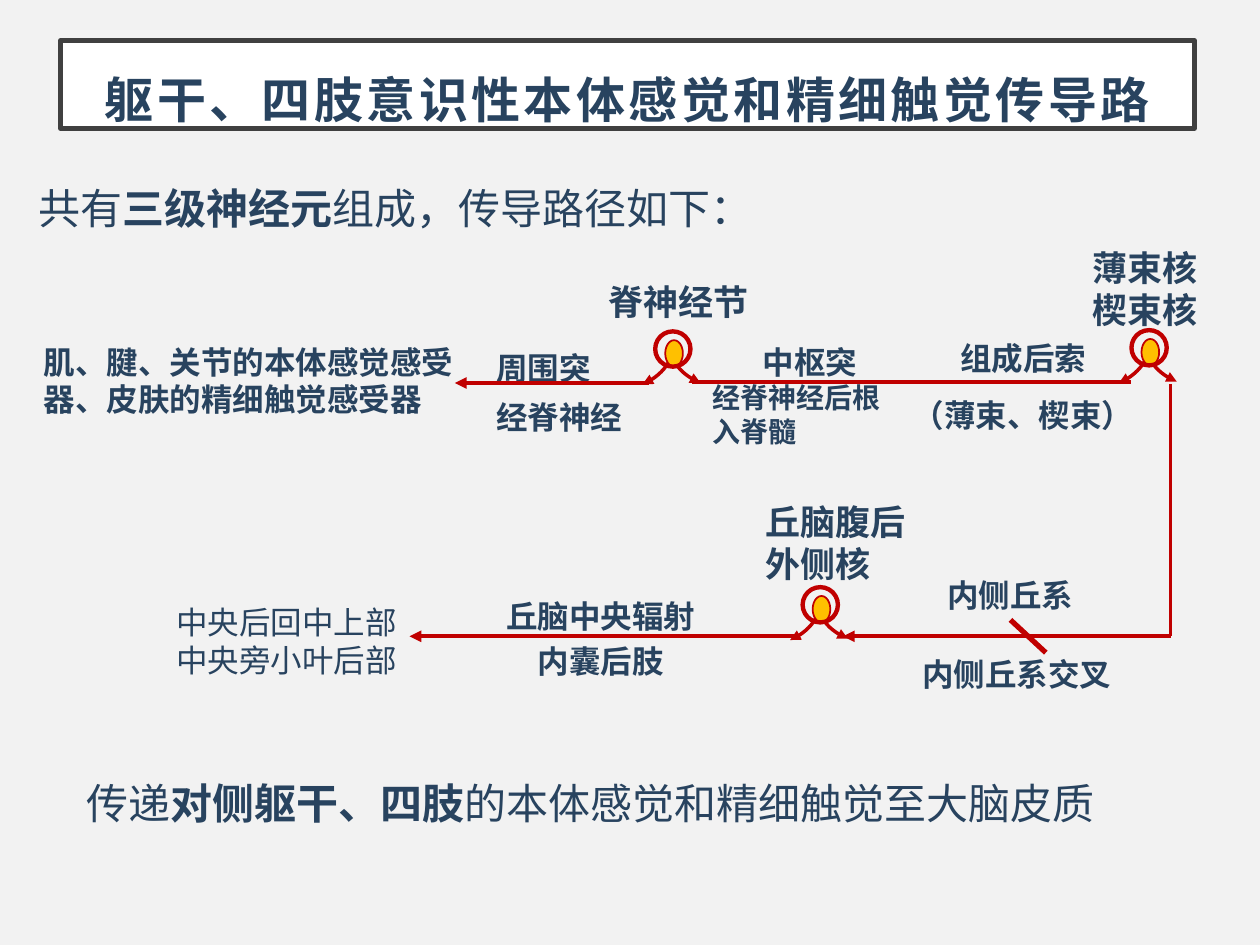
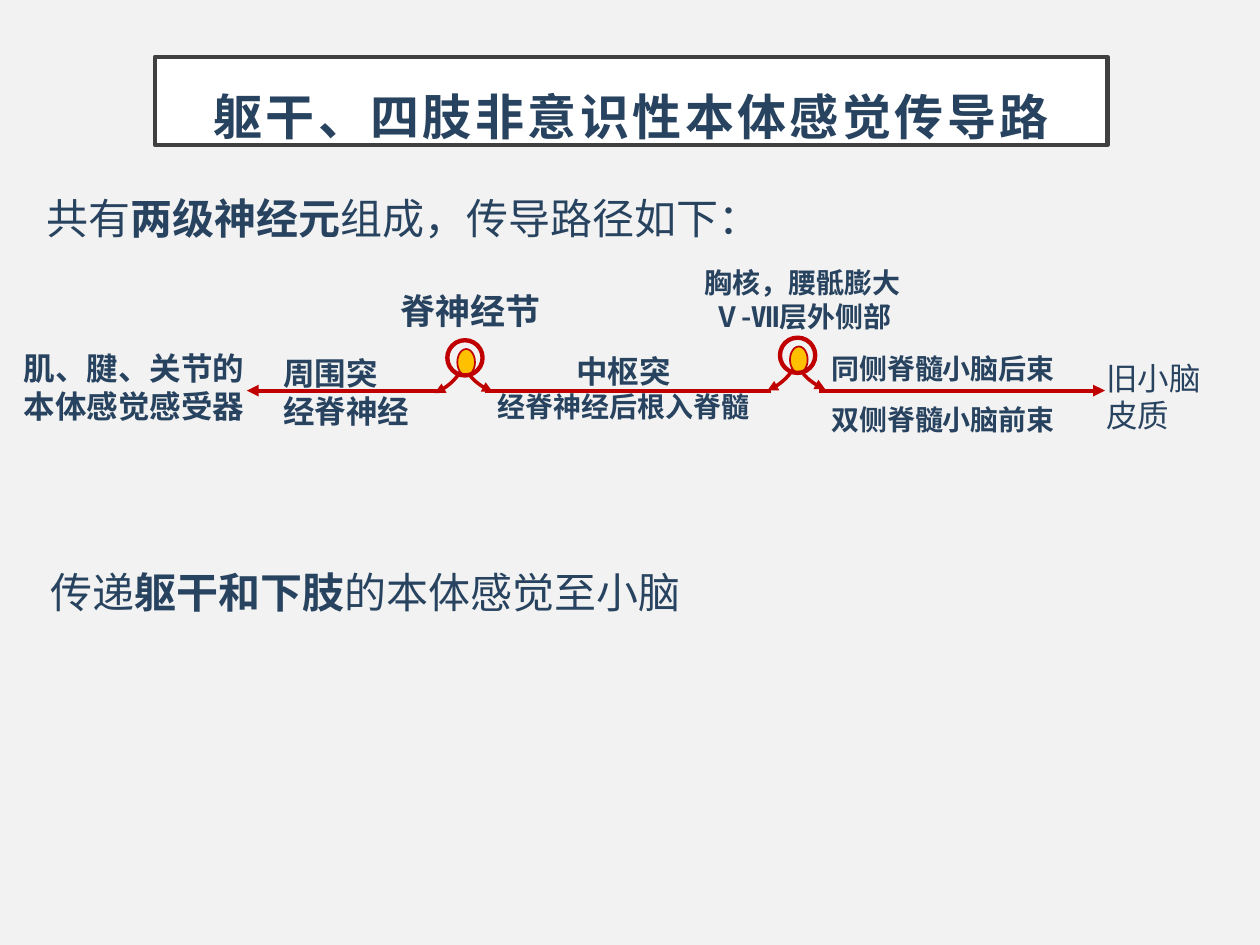
from dataclasses import dataclass
from lxml import etree
from pptx import Presentation
from pptx.dml.color import RGBColor
from pptx.enum.shapes import MSO_CONNECTOR, MSO_SHAPE
from pptx.enum.text import MSO_ANCHOR, MSO_AUTO_SIZE, PP_ALIGN
from pptx.oxml.ns import qn
from pptx.util import Inches, Pt

OVAL, LINE = MSO_SHAPE.OVAL, MSO_CONNECTOR.STRAIGHT
LEFT, MID = PP_ALIGN.LEFT, PP_ALIGN.CENTER
TOP, CENTER = MSO_ANCHOR.TOP, MSO_ANCHOR.MIDDLE
FIT, FIXED = MSO_AUTO_SIZE.SHAPE_TO_FIT_TEXT, MSO_AUTO_SIZE.NONE


@dataclass(frozen=True)
class Theme:
    font: str = "Noto Sans CJK SC"
    ink: str = "28435F"
    back: str = "F2F2F2"
    panel: str = "FFFFFF"
    frame: str = "404040"
    nerve: str = "C00000"
    core: str = "FFC000"
    head: int = 28
    lead: int = 24
    node: int = 20
    label: int = 18
    small: int = 16


def rgb(code):
    return RGBColor.from_string(code)


def put(item, values):
    for name, value in values.items():
        setattr(item, name, value)


def place(item, box):
    names = ("left", "top", "width", "height")
    put(item, dict(zip(names, map(Inches, box))))


def curve(start, bend, end, steps=8):
    """Points on a quadratic curve."""
    for i in range(steps + 1):
        t = i / steps
        yield tuple((1 - t) ** 2 * a + 2 * t * (1 - t) * b + t * t * c
                    for a, b, c in zip(start, bend, end))


class Deck:
    def __init__(self, theme):
        self.theme = theme
        self.prs = Presentation()
        put(self.prs, {"slide_width": Inches(10), "slide_height": Inches(7.5)})
        fill = self.prs.slide_master.background.fill
        fill.solid()
        fill.fore_color.rgb = rgb(theme.back)
        self.slide = None

    def page(self, title, box):
        """Start a slide with its framed title."""
        t = self.theme
        self.slide = self.prs.slides.add_slide(self.prs.slide_layouts[5])
        head = self.slide.shapes.title
        place(head, box)
        head.fill.solid()
        head.fill.fore_color.rgb = rgb(t.panel)
        self.stroke(head, 2.5, t.frame)
        sides = ("left", "right", "top", "bottom")
        put(head.text_frame, {f"margin_{side}": Inches(0.2) for side in sides})
        put(head.text_frame, {"word_wrap": True, "auto_size": FIXED,
                              "vertical_anchor": CENTER})
        self.words(head.text_frame.paragraphs[0], title, t.head, True, MID, 1.5, 200)

    def words(self, par, line, size, bold, align=LEFT, space=1.0, track=0):
        """Fill a paragraph; parts between stars switch their weight."""
        put(par, {"alignment": align, "line_spacing": space})
        for i, part in enumerate(line.split("*")):
            run = par.add_run()
            run.text = part
            put(run.font, {"name": self.theme.font, "size": Pt(size),
                           "bold": bold != bool(i % 2)})
            run.font.color.rgb = rgb(self.theme.ink)
            props = run.font._element
            etree.SubElement(props, qn("a:ea"), typeface=self.theme.font)
            if track:
                props.set("spc", str(track))

    def text(self, box, *lines, size=None, bold=True, align=LEFT, anchor=TOP):
        """Each line is a string or (string, overrides)."""
        shape = self.slide.shapes.add_textbox(*map(Inches, box))
        frame = shape.text_frame
        put(frame, {"word_wrap": True, "auto_size": FIT, "vertical_anchor": anchor})
        base = {"size": size or self.theme.label, "bold": bold, "align": align}
        for i, item in enumerate(lines):
            line, extra = (item, {}) if isinstance(item, str) else item
            par = frame.add_paragraph() if i else frame.paragraphs[0]
            self.words(par, line, **{**base, **extra})

    def lead(self, box, line):
        self.text(box, (line, {"space": 1.5}), size=self.theme.lead, bold=False)

    def stroke(self, shape, width, color=None, arrow=False):
        shape.line.color.rgb = rgb(color or self.theme.nerve)
        shape.line.width = Pt(width)
        if arrow:
            props = shape._element.spPr.find(qn("a:ln"))
            etree.SubElement(props, qn("a:tailEnd"), type="triangle")

    def link(self, start, end, arrow=False, width=2.25):
        line = self.slide.shapes.add_connector(LINE, *map(Inches, start + end))
        self.stroke(line, width, arrow=arrow)
        etree.SubElement(line._element.spPr, qn("a:effectLst"))

    def oval(self, box, width, color=None):
        shape = self.slide.shapes.add_shape(OVAL, *map(Inches, box))
        shape.shadow.inherit = False
        if color:
            shape.fill.solid()
            shape.fill.fore_color.rgb = rgb(color)
        else:
            shape.fill.background()
        self.stroke(shape, width)

    def cell(self, x, y):
        """Neuron: two branches, a core and a ring with corner x, y."""
        for arm in (((0.11, 0.24), (0.04, 0.36), (-0.1, 0.42)),
                    ((0.16, 0.25), (0.22, 0.35), (0.36, 0.41))):
            dots = [(Inches(x + a), Inches(y + b)) for a, b in curve(*arm)]
            branch = self.slide.shapes.build_freeform(*dots[0])
            branch.add_line_segments(dots[1:], close=False)
            shape = branch.convert_to_shape()
            shape.shadow.inherit = False
            shape.fill.background()
            self.stroke(shape, 2, arrow=True)
        self.oval((x + 0.08, y + 0.07, 0.14, 0.21), 1, self.theme.core)
        self.oval((x, y, 0.28, 0.28), 2.5)


def aware(deck):
    t = deck.theme
    deck.page("躯干、四肢意识性本体感觉和精细触觉传导路", (0.48, 0.32, 9, 0.7))
    deck.lead((0.21, 1.2, 9.38, 0.71), "共有*三级神经元*组成，传导路径如下：")

    # First neuron: receptors to spinal cord
    deck.text((3.84, 2.63, 1.63, 0.89), ("周围突", {"space": 1.3}),
              ("经脊神经", {"space": 1.3}))
    deck.text((0.25, 2.67, 3.54, 0.71), "肌、腱、关节的本体感觉感受器、皮肤的精细触觉感受器")
    deck.cell(5.2, 2.63)
    deck.text((4.73, 2.18, 1.51, 0.44), "脊神经节", size=t.node)
    deck.link((5.15, 3.04), (3.61, 3.04), arrow=True)
    deck.text((5.56, 2.67, 1.74, 0.94), ("中枢突", {"align": MID}),
              ("经脊神经后根入脊髓", {"size": t.small}), anchor=CENTER)
    deck.link((5.49, 3.03), (8.98, 3.03))
    deck.text((7.14, 2.58, 1.96, 0.92), ("组成后索", {"space": 1.2}),
              ("（薄束、楔束）", {"space": 1.5}), align=MID)

    # Second neuron: crossing to the other side
    deck.cell(8.98, 2.62)
    deck.text((8.47, 1.91, 1.24, 0.77), "薄束核", "楔束核", size=t.node, align=MID)
    deck.link((9.29, 3.05), (9.29, 5.05))
    deck.link((9.29, 5.05), (6.69, 5.05), arrow=True)
    deck.link((8.3, 5.18), (8.02, 4.92), width=3)
    deck.text((7.22, 5.15, 1.91, 0.4), "内侧丘系交叉", anchor=CENTER)
    deck.text((7.42, 4.52, 1.87, 0.4), "内侧丘系", anchor=CENTER)

    # Third neuron: thalamus to cortex
    deck.cell(6.37, 4.66)
    deck.text((5.98, 3.92, 1.56, 0.77), "丘脑腹后外侧核", size=t.node)
    deck.link((6.31, 5.05), (3.25, 5.05), arrow=True)
    deck.text((3.45, 4.63, 2.64, 0.78), ("丘脑中央辐射", {"space": 1.2}),
              ("内囊后肢", {"space": 1.2}), align=MID)
    deck.text((1.3, 4.73, 2.24, 0.71), "中央后回中上部", "中央旁小叶后部",
              bold=False, anchor=CENTER)
    deck.lead((0.59, 5.92, 8.78, 0.71), "传递*对侧躯干、四肢*的本体感觉和精细触觉至大脑皮质")


def reflex(deck):
    t = deck.theme
    deck.page("躯干、四肢非意识性本体感觉传导路", (1.23, 0.45, 7.56, 0.7))
    deck.lead((0.27, 1.28, 7.13, 0.71), "共有*两级神经元*组成，传导路径如下：")

    # First neuron: receptors to spinal cord
    deck.text((2.15, 2.67, 1.63, 0.8), ("周围突", {"space": 1.3}), "经脊神经")
    deck.text((0.09, 2.72, 2.19, 0.71), "肌、腱、关节的本体感觉感受器")
    deck.cell(3.55, 2.7)
    deck.text((3.08, 2.25, 1.51, 0.44), "脊神经节", size=t.node)
    deck.link((3.5, 3.1), (1.96, 3.1), arrow=True)
    deck.text((3.46, 2.59, 2.98, 0.82), ("中枢突", {"space": 1.5}),
              ("经脊神经后根入脊髓", {"size": t.small}), align=MID, anchor=CENTER)
    deck.link((3.85, 3.1), (6.12, 3.1))

    # Second neuron: spinal cord to cerebellum
    deck.cell(6.19, 2.68)
    deck.text((5.45, 2.06, 1.84, 0.64), "胸核，腰骶膨大Ⅴ-Ⅶ层外侧部",
              size=t.small, align=MID)
    deck.text((8.68, 2.79, 1.06, 0.71), "旧小脑皮质", bold=False, anchor=CENTER)
    deck.link((6.5, 3.1), (8.77, 3.1), arrow=True)
    deck.text((6.35, 2.74, 2.27, 0.77), "同侧脊髓小脑后束",
              ("双侧脊髓小脑前束", {"space": 1.5}),
              size=t.small, align=MID, anchor=CENTER)
    deck.lead((0.3, 4.25, 6.66, 0.71), "传递*躯干和下肢*的本体感觉至小脑")


def main():
    deck = Deck(Theme())
    aware(deck)
    reflex(deck)
    deck.prs.save("out.pptx")


if __name__ == "__main__":
    main()
